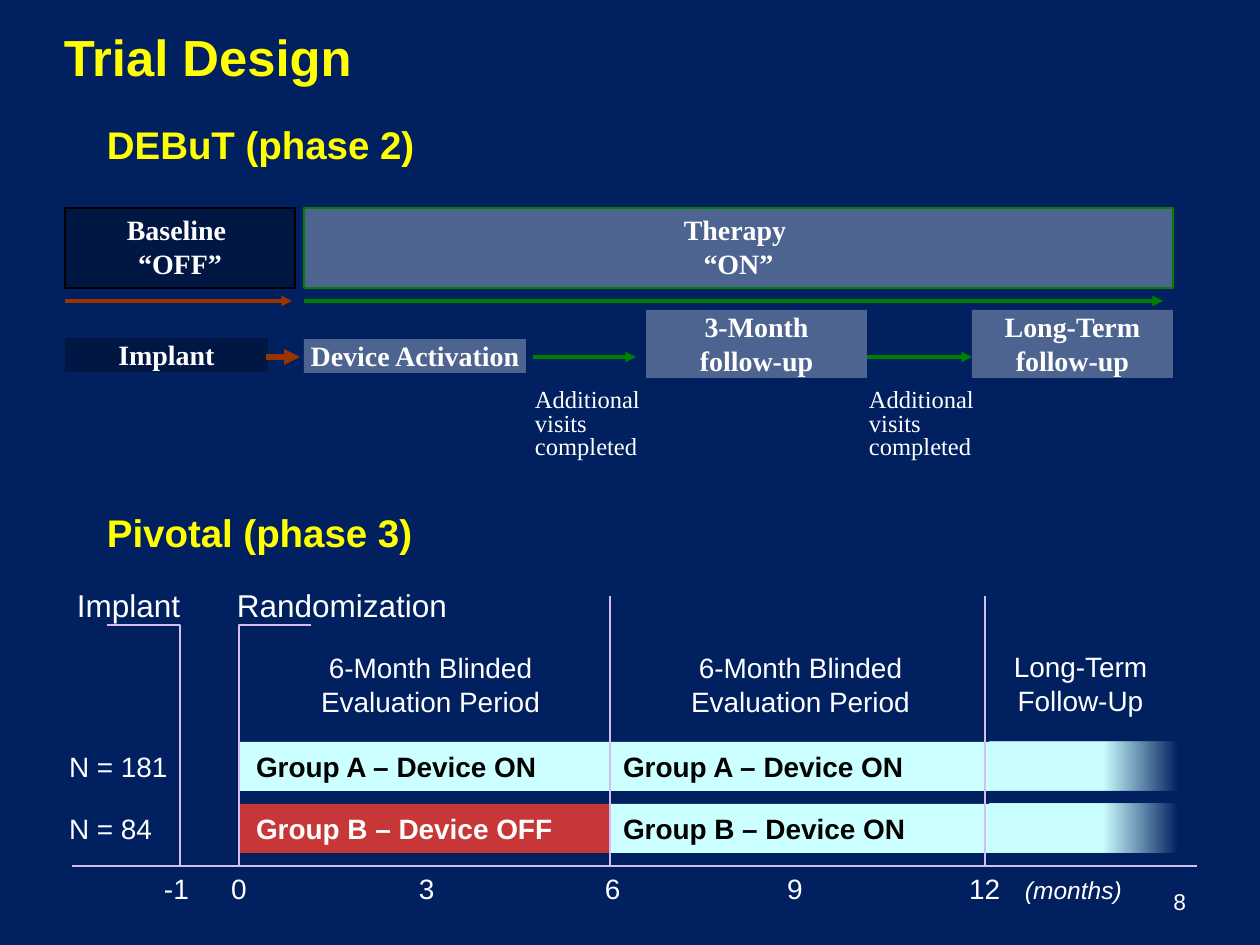
from lxml import etree
from pptx import Presentation
from pptx import util as u
from pptx.dml.color import RGBColor
from pptx.enum import shapes, text
from pptx.oxml import parse_xml
from pptx.oxml.ns import qn, nsdecls

PX = 914400 / 126
NAVY = RGBColor(0x00, 0x20, 0x60)
YELLOW = RGBColor(0xFF, 0xFF, 0x00)
WHITE = RGBColor(0xFF, 0xFF, 0xFF)
BLACK = RGBColor(0x00, 0x00, 0x00)
LILAC = RGBColor(0xD6, 0xBD, 0xF0)
AQUA = RGBColor(0xCC, 0xFF, 0xFF)
RED = RGBColor(0xC7, 0x37, 0x37)
GREEN = RGBColor(0x00, 0x80, 0x00)
RUST = RGBColor(0x99, 0x33, 0x00)
SANS, SERIF = "Arial", "Times New Roman"
LEFT, CENTER, RIGHT = text.PP_ALIGN.LEFT, text.PP_ALIGN.CENTER, text.PP_ALIGN.RIGHT
TOP, MIDDLE, BOTTOM = text.MSO_ANCHOR.TOP, text.MSO_ANCHOR.MIDDLE, text.MSO_ANCHOR.BOTTOM
TIGHT, WIDE, NO_INSET = (11, 5), (13, 6), (0, 0)

# Headings: words, left, top, width, height, size
headings = [
    ("DEBuT (phase 2)", 96, 116, 341, 58, 22),
    ("Pivotal (phase 3)", 96, 504, 341, 58, 22),
]
# Phase 2 boxes: lines, left, top, width, height, fill, outline, insets
phases = [
    (["Baseline ", "“OFF”"], 65, 208, 230, 80, BLACK, BLACK, TIGHT),
    (["Therapy ", "“ON”"], 304, 208, 869, 80, WHITE, GREEN, TIGHT),
    (["Implant"], 65, 338, 203, 34, BLACK, None, NO_INSET),
    (["Device Activation"], 304, 339, 222, 34, WHITE, None, NO_INSET),
    (["3-Month", "follow-up"], 646, 310, 221, 68, WHITE, None, NO_INSET),
    (["Long-Term", "follow-up"], 972, 310, 201, 68, WHITE, None, NO_INSET),
]
# Phase 2 arrows: start x, end x, y, colour, width
arrows = [
    (65, 292, 301, RUST, 2),
    (304, 1163, 301, GREEN, 2),
    (266, 300, 357, RUST, 3),
    (533, 636, 357, GREEN, 2),
    (867, 972, 357, GREEN, 2),
]
visit_lefts = [524, 858]

# Phase 3 chart
AXIS_Y, BAND_H = 866, 49
ZERO_X, SIX_X, TWELVE_X = 239, 610, 985
FADE_X, FADE_W = 990, 188
months = [("-1", 151), ("0", 218), ("3", 406), ("6", 592), ("9", 774), ("12", 956)]
brackets = [[(107, 625), (180, 625), (180, AXIS_Y)],
            [(311, 625), (ZERO_X, 625), (ZERO_X, AXIS_Y)]]
events = [("Implant", 64, 130), ("Randomization", 224, 237)]
periods = [(["6-Month Blinded", "Evaluation Period"], 307, 645, 247),
           (["6-Month Blinded", "Evaluation Period"], 677, 645, 247),
           (["Long-Term", "Follow-Up"], 982, 644, 197)]
# Groups: size, band top, first-half label, fill, text colour, second-half label
groups = [
    ("N = 181", 742, "Group A – Device ON", AQUA, BLACK, "Group A – Device ON"),
    ("N = 84", 804, "Group B – Device OFF", RED, WHITE, "Group B – Device ON"),
]

deck = Presentation()
deck.slide_width, deck.slide_height = u.Inches(10), u.Inches(7.5)
page = deck.slides.add_slide(deck.slide_layouts[6])
page.background.fill.solid()
page.background.fill.fore_color.rgb = NAVY


def px(*values):
    return [round(value * PX) for value in values]


def write(box, lines, size, font=SANS, color=WHITE, bold=False, italic=False,
          align=LEFT, anchor=TOP, insets=TIGHT, spacing=None, wrap=True):
    frame = box.text_frame
    frame.text = "\n".join(lines)
    frame.word_wrap = wrap
    frame.vertical_anchor = anchor
    frame.margin_left, frame.margin_top = px(*insets)
    frame.margin_right, frame.margin_bottom = px(*insets)
    for para in frame.paragraphs:
        para.alignment = align
        if spacing:
            para.line_spacing = spacing
        for span in para.runs:
            span.font.name, span.font.size = font, u.Pt(size)
            span.font.bold, span.font.italic = bold, italic
            span.font.color.rgb = color


def label(lines, left, top, width, height, size, **style):
    write(page.shapes.add_textbox(*px(left, top, width, height)), lines, size, **style)


def rectangle(left, top, width, height, fill, outline=None):
    box = page.shapes.add_shape(shapes.MSO_SHAPE.RECTANGLE, *px(left, top, width, height))
    box.shadow.inherit = False
    box.fill.solid()
    box.fill.fore_color.rgb = fill
    if outline is None:
        box.line.fill.background()
    else:
        box.line.color.rgb, box.line.width = outline, u.Pt(1.5)
    return box


def set_alpha(box, percent):
    color = box._element.spPr.find(qn("a:solidFill")).find(qn("a:srgbClr"))
    etree.SubElement(color, qn("a:alpha")).set("val", str(percent * 1000))


def fade(box, color):
    solid = box._element.spPr.find(qn("a:solidFill"))
    stops = "".join(
        f'<a:gs pos="{place * 1000}"><a:srgbClr val="{color}">'
        f'<a:alpha val="{alpha * 1000}"/></a:srgbClr></a:gs>'
        for place, alpha in [(0, 0), (40, 100), (100, 100)])
    solid.getparent().replace(solid, parse_xml(
        f'<a:gradFill {nsdecls("a")} rotWithShape="1"><a:gsLst>{stops}</a:gsLst>'
        '<a:lin ang="10800000" scaled="0"/></a:gradFill>'))


def rule(x1, y1, x2, y2, color=LILAC, width=1.5, arrow=False):
    line = page.shapes.add_connector(shapes.MSO_CONNECTOR.STRAIGHT, *px(x1, y1, x2, y2))
    line.line.color.rgb, line.line.width = color, u.Pt(width)
    if arrow:
        etree.SubElement(line.line._get_or_add_ln(), qn("a:tailEnd")).set("type", "triangle")
    etree.SubElement(line._element.spPr, qn("a:effectLst"))


# Title and headings
label(["Trial Design"], 59, 11, 1152, 82, 29, color=YELLOW, bold=True,
      anchor=BOTTOM, insets=(5, 5), spacing=0.95)
for words, *place, size in headings:
    label([words], *place, size, color=YELLOW, bold=True)

# Phase 2 flow
for lines, *place, fill, outline, insets in phases:
    box = rectangle(*place, fill, outline)
    set_alpha(box, 30)
    write(box, lines, 16, font=SERIF, bold=True, align=CENTER, insets=insets)
for start, end, y, color, width in arrows:
    rule(start, y, end, y, color, width, arrow=True)
for left in visit_lefts:
    label(["Additional visits completed"], left, 385, 152, 82, 14, font=SERIF, spacing=0.8)

# Phase 3 bands and group labels
for count, top, first, fill, color, second in groups:
    rectangle(ZERO_X, top, SIX_X - ZERO_X, BAND_H, fill)
    rectangle(SIX_X, top, FADE_X - SIX_X, BAND_H, AQUA)
    fade(rectangle(FADE_X, top, FADE_W, BAND_H, AQUA), AQUA)
    label([count], 58, top + 3, 122, 45, 16, wrap=False)
    label([first], 245, top + 3, 369, 45, 16, color=color, bold=True)
    label([second], 612, top + 3, 308, 45, 16, color=BLACK, bold=True, wrap=False)

# Phase 3 axis, period lines and brackets
rule(72, AXIS_Y, 1197, AXIS_Y)
for x in (SIX_X, TWELVE_X):
    rule(x, 596, x, AXIS_Y)
for start, *corners in brackets:
    builder = page.shapes.build_freeform(*start, scale=PX)
    builder.add_line_segments(corners, close=False)
    bracket = builder.convert_to_shape()
    bracket.shadow.inherit = False
    bracket.fill.background()
    bracket.line.color.rgb, bracket.line.width = LILAC, u.Pt(1.5)

# Phase 3 captions
for words, left, width in events:
    label([words], left, 582, width, 48, 18, anchor=BOTTOM, insets=WIDE,
          spacing=0.9, wrap=False)
for lines, left, top, width in periods:
    label(lines, left, top, width, 81, 16, align=CENTER, insets=WIDE)
for month, left in months:
    label([month], left, 866, 82, 47, 16, insets=WIDE)
label(["(months)"], 1012, 872, 127, 39, 14, italic=True, anchor=BOTTOM,
      insets=WIDE, spacing=0.9, wrap=False)

# Page number
label(["8"], 1134, 876, 63, 50, 13, align=RIGHT, anchor=MIDDLE)

deck.save("out.pptx")
